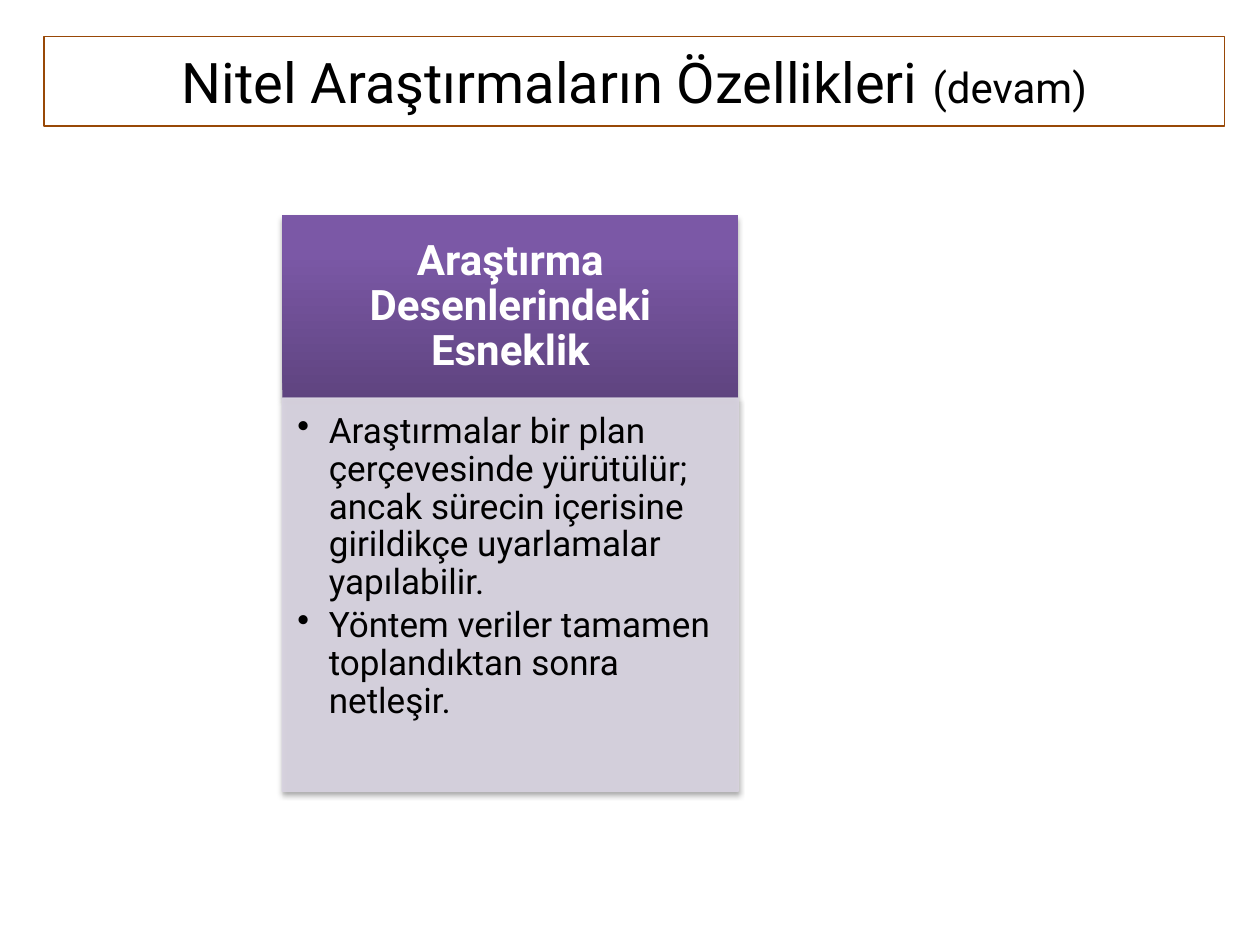
"""Build the slide on flexible designs in qualitative research."""
from dataclasses import dataclass

from lxml.etree import SubElement
from pptx import Presentation
from pptx.dml.color import RGBColor as RGB
from pptx.enum.shapes import MSO_SHAPE as SHAPE
from pptx.enum.text import MSO_ANCHOR as ANCHOR, PP_ALIGN as ALIGN
from pptx.oxml.ns import qn
from pptx.util import Inches, Pt


@dataclass(frozen=True)
class Theme:
    font: str = "Roboto"
    text: str = "000000"
    header_text: str = "FFFFFF"
    border: str = "984807"
    panel: str = "D8D3E0"
    panel_alpha: int = 90
    header_stops: tuple = ((0, "5F4480"), (80, "7B58A6"), (100, "7C57A8"))
    title_size: int = 32
    header_size: int = 24
    body_size: int = 20
    line_width: float = 0.75


def add_run(p, text, *, font, size, color, bold=False):
    r = p.add_run()
    r.text = text
    r.font.name = font
    r.font.size = Pt(size)
    r.font.bold = bold
    r.font.color.rgb = RGB.from_string(color)
    return r


def add_color(parent, color, alpha=100):
    clr = SubElement(parent, qn("a:srgbClr"), val=color)
    if alpha < 100:
        SubElement(clr, qn("a:alpha"), val=str(alpha * 1000))


class SlideBuilder:
    def __init__(self, slide, theme):
        self.slide = slide
        self.theme = theme

    def box(self, left, top, width, height, margins=(0.1, 0.05, 0.1, 0.05), anchor=ANCHOR.MIDDLE):
        sp = self.slide.shapes.add_shape(
            SHAPE.RECTANGLE, Inches(left), Inches(top), Inches(width), Inches(height))
        sp.shadow.inherit = False
        sp.fill.background()
        sp.line.fill.background()
        tf = sp.text_frame
        tf.word_wrap = True
        tf.vertical_anchor = anchor
        tf.margin_left, tf.margin_top, tf.margin_right, tf.margin_bottom = map(Inches, margins)
        return sp

    def outline(self, sp, color):
        sp.line.color.rgb = RGB.from_string(color)
        sp.line.width = Pt(self.theme.line_width)

    def shadow(self, sp):
        effects = sp._element.spPr.find(qn("a:effectLst"))
        shadow = SubElement(effects, qn("a:outerShdw"), blurRad=str(Pt(3.1)), dist=str(Pt(1.8)),
                            dir="5400000", rotWithShape="0")
        add_color(shadow, self.theme.text, 35)

    def title(self, text, suffix, *at):
        t = self.theme
        sp = self.box(*at)
        self.outline(sp, t.border)
        p = sp.text_frame.paragraphs[0]
        p.alignment = ALIGN.CENTER
        for part, size in ((text, t.title_size), (suffix, t.header_size)):
            add_run(p, part, font=t.font, size=size, color=t.text)

    def header(self, text, *at):
        t = self.theme
        sp = self.box(*at, margins=(0.19, 0.11, 0.19, 0.11))
        sp.fill.gradient()
        sp.fill.gradient_angle = 90
        stops = sp._element.spPr.find(qn("a:gradFill")).find(qn("a:gsLst"))
        stops.clear()
        for pos, color in t.header_stops:
            add_color(SubElement(stops, qn("a:gs"), pos=str(pos * 1000)), color)
        self.shadow(sp)
        p = sp.text_frame.paragraphs[0]
        p.alignment = ALIGN.CENTER
        p.line_spacing = 0.9
        add_run(p, text, font=t.font, size=t.header_size, color=t.header_text, bold=True)

    def bullets(self, items, *at):
        t = self.theme
        sp = self.box(*at, margins=(0.12, 0.12, 0.16, 0.17), anchor=ANCHOR.TOP)
        sp.fill.solid()
        sp.fill.fore_color.rgb = RGB.from_string(t.panel)
        self.outline(sp, t.panel)
        for clr in sp._element.spPr.iter(qn("a:srgbClr")):
            SubElement(clr, qn("a:alpha"), val=str(t.panel_alpha * 1000))
        self.shadow(sp)
        tf = sp.text_frame
        for i, item in enumerate(items):
            p = tf.add_paragraph() if i else tf.paragraphs[0]
            p.alignment = ALIGN.LEFT
            p.line_spacing = 0.9
            p.space_after = Pt(3)
            pPr = p._p.get_or_add_pPr()
            pPr.set("marL", str(Inches(0.25)))
            pPr.set("indent", str(Inches(-0.25)))
            SubElement(pPr, qn("a:buChar"), char="•")
            add_run(p, item, font=t.font, size=t.body_size, color=t.text)


def main():
    prs = Presentation()
    prs.slide_width, prs.slide_height = Inches(10), Inches(7.5)
    s = SlideBuilder(prs.slides.add_slide(prs.slide_layouts[6]), Theme())
    left, top, width, header_height, body_height = 2.24, 1.71, 3.62, 1.45, 3.12
    s.header("Araştırma Desenlerindeki Esneklik", left, top, width, header_height)
    s.bullets((
        "Araştırmalar bir plan çerçevesinde yürütülür; ancak sürecin içerisine girildikçe "
        "uyarlamalar yapılabilir.",
        "Yöntem veriler tamamen toplandıktan sonra netleşir.",
    ), left, top + header_height, width, body_height)
    s.title("Nitel Araştırmaların Özellikleri ", "(devam)", 0.35, 0.29, 9.37, 0.71)
    prs.save("out.pptx")


if __name__ == "__main__":
    main()
